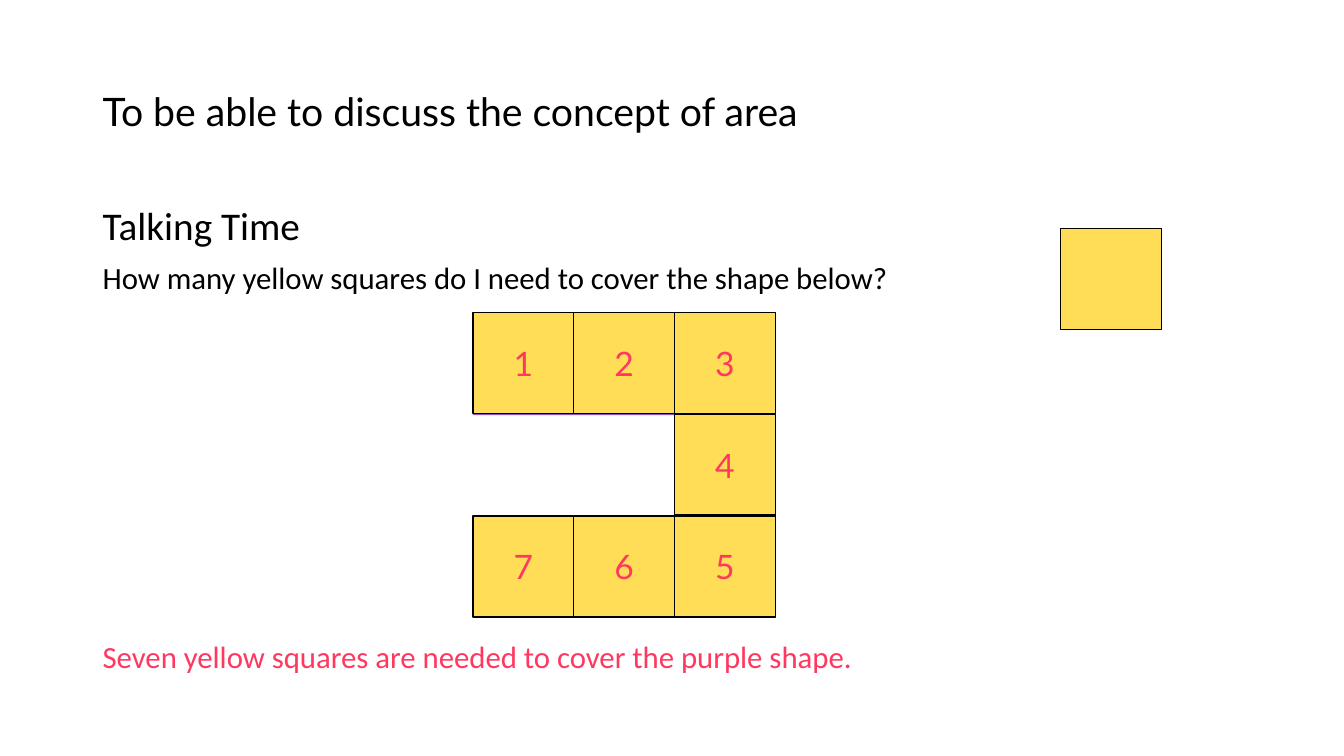
"""Build a slide that counts the yellow squares covering a shape."""
from pptx import Presentation
from pptx.dml.color import RGBColor
from pptx.enum.shapes import MSO_SHAPE
from pptx.enum.text import MSO_ANCHOR, PP_ALIGN
from pptx.util import Inches, Pt

BLACK, PINK, YELLOW, PURPLE = "000000", "FF3860", "FFDD57", "7957D5"
TITLE = [("To be able to discuss the concept of area", 28, "Lato", BLACK)]
TASK = [
    ("Talking Time", 28, "Calibri", BLACK),
    ("How many yellow squares do I need to cover the shape below?", 22, "Calibri", BLACK),
]
ANSWER = [("Seven yellow squares are needed to cover the purple shape.", 22, "Calibri", PINK)]
CELLS = [(0, 0), (1, 0), (2, 0), (2, 1), (2, 2), (1, 2), (0, 2)]
BARS = [(0, 0, 3, 1), (2, 0, 1, 3), (0, 2, 3, 1)]
LEFT, TOP, STEP = 4.69, 3.1, 1.01
BAR_TOP = 3.12
KEY = (10.52, 2.27)


def color(code):
    return RGBColor.from_string(code)


def style(para, size, face, code):
    font = para.font
    font.size, font.name = Pt(size), face
    font.color.rgb = color(code)


def write(slide, top, width, height, lines, anchor=MSO_ANCHOR.TOP):
    box = slide.shapes.add_textbox(Inches(0.92), Inches(top), Inches(width), Inches(height))
    frame = box.text_frame
    frame.word_wrap = True
    frame.vertical_anchor = anchor
    frame.text = "\n".join(line[0] for line in lines)
    for i, (para, line) in enumerate(zip(frame.paragraphs, lines)):
        para.line_spacing = 0.9
        para.space_before = Pt(10 if i else 0)
        style(para, *line[1:])


def block(slide, left, top, width, height, fill, edge=None):
    shape = slide.shapes.add_shape(
        MSO_SHAPE.RECTANGLE, Inches(left), Inches(top), Inches(width), Inches(height))
    shape.shadow.inherit = False
    shape.fill.solid()
    shape.fill.fore_color.rgb = color(fill)
    if edge:
        shape.line.color.rgb = color(edge)
        shape.line.width = Pt(1)
    else:
        shape.line.fill.background()
    return shape


def square(slide, left, top, label=""):
    shape = block(slide, left, top, 1, 1, YELLOW, BLACK)
    if label:
        frame = shape.text_frame
        frame.text = label
        frame.vertical_anchor = MSO_ANCHOR.MIDDLE
        para = frame.paragraphs[0]
        para.alignment = PP_ALIGN.CENTER
        style(para, 24, "Lato", PINK)


def main():
    deck = Presentation()
    deck.slide_width, deck.slide_height = Inches(13.33), Inches(7.5)
    slide = deck.slides.add_slide(deck.slide_layouts[6])
    write(slide, 0.4, 9.6, 1.45, TITLE, MSO_ANCHOR.MIDDLE)
    write(slide, 2, 9.4, 1, TASK)
    write(slide, 6.32, 11.5, 0.44, ANSWER)
    for col, row, width, height in BARS:
        block(slide, LEFT + col, BAR_TOP + row, width, height, PURPLE)
    square(slide, *KEY)
    for i, (col, row) in enumerate(CELLS, 1):
        square(slide, LEFT + col, TOP + row * STEP, str(i))
    deck.save("out.pptx")


if __name__ == "__main__":
    main()
